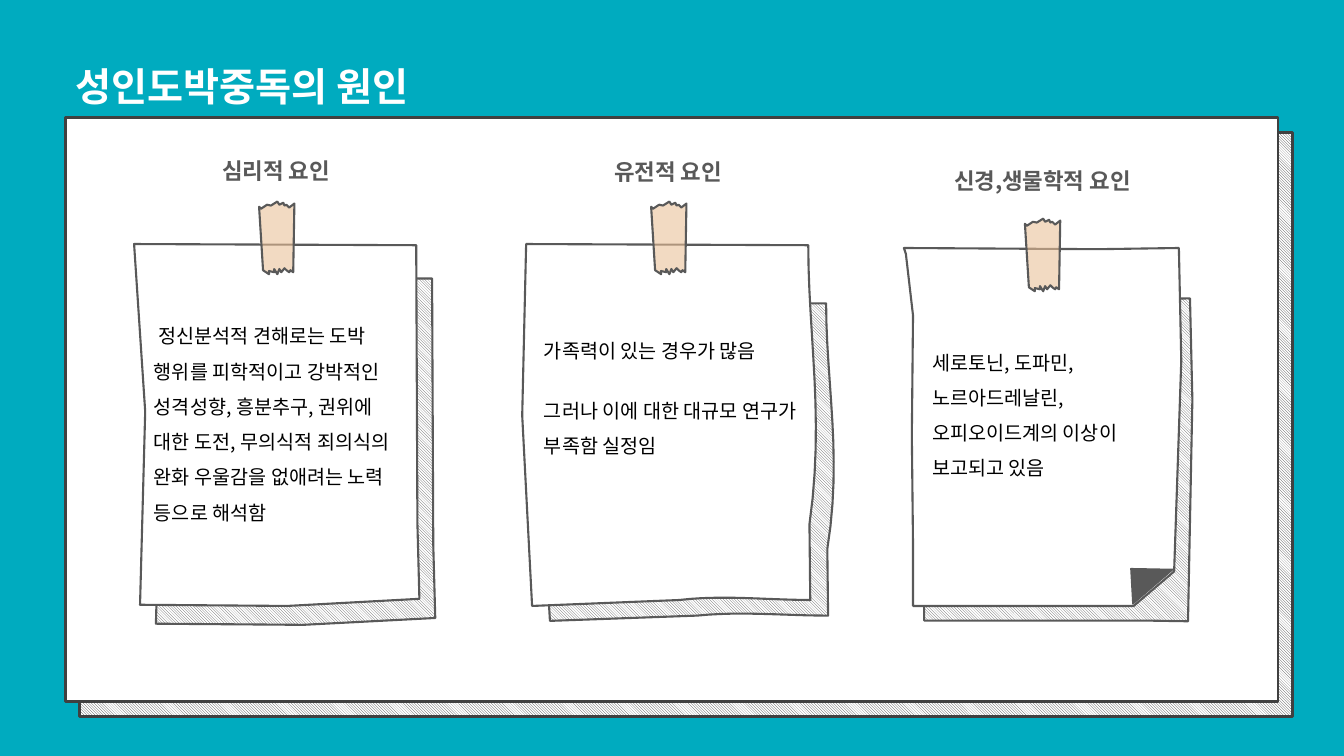
from dataclasses import dataclass

from lxml import etree
from pptx import Presentation
from pptx.dml.color import RGBColor
from pptx.enum.dml import MSO_PATTERN
from pptx.enum.shapes import MSO_SHAPE
from pptx.enum.text import PP_ALIGN
from pptx.oxml.ns import qn
from pptx.util import Cm, Pt

RECTANGLE = MSO_SHAPE.RECTANGLE
HATCH = MSO_PATTERN.DARK_DOWNWARD_DIAGONAL
LEFT, CENTER = PP_ALIGN.LEFT, PP_ALIGN.CENTER


@dataclass(frozen=True)
class Theme:
    font: str = "Noto Sans CJK KR"
    teal: str = "00ABBF"
    white: str = "FFFFFF"
    black: str = "000000"
    frame: str = "404040"
    pencil: str = "595959"
    tape: str = "EAC096"
    tape_opacity: int = 58
    title_size: float = 28
    label_size: float = 16
    body_size: float = 14
    paragraph_gap: float = 17.5


THEME = Theme()

# Outlines in cm from their own top left; six numbers make a Bezier curve.
TAPE = [
    (0.1, 1.73), (0.25, 1.83), (0.25, 1.75), (0.38, 1.78), (0.38, 1.7), (0.46, 1.83),
    (0.51, 1.7), (0.56, 1.78), (0.64, 1.68), (0.69, 1.73), (0.76, 1.78), (0.79, 1.73),
    (0.86, 1.78), (0.89, 0.05), (0.76, 0.15), (0.69, 0.08), (0.64, 0.1), (0.61, 0.03),
    (0.51, 0.08), (0.46, 0), (0.3, 0.1), (0.2, 0.08), (0.05, 0.18), (0, 0.13),
]
TILTED_SHEET = [
    (0, 0), (7.11, 0.03), (7.14, 7.04), (7.19, 8.94), (3.86, 9.12), (0.15, 9.09), (0.28, 4.22),
]
WAVY_SHEET = [
    (0.1, 0), (7.21, 0.03), (7.21, 2.36, 7.62, 4.39, 7.24, 7.06), (7.26, 8.97),
    (6.17, 8.97, 5.08, 8.84, 3.96, 8.97), (0.25, 9.12), (0, 4.32),
]
FOLDED_TOP = [(0, 0), (4.9, 0.03), (6.93, 0), (6.99, 2.84)]
FOLDED_BOTTOM = [
    (5.79, 9.02), (0.23, 9.02), (0.23, 7.49), (0.2, 4.72), (0.23, 1.7), (0.05, 0.15),
]
FOLDED_SHEET = FOLDED_TOP + [(6.81, 8.15)] + FOLDED_BOTTOM
UNFOLDED_SHEET = FOLDED_TOP + [(6.88, 9.04)] + FOLDED_BOTTOM
FOLD = [(5.77, 8.97), (6.78, 8.1), (5.72, 8.08)]


@dataclass(frozen=True)
class Card:
    label: str
    label_box: tuple
    body: tuple
    body_box: tuple
    outline: list
    sheet_at: tuple
    shadow_outline: list
    shadow_at: tuple
    shadow_stretch: float
    tape_at: tuple
    fold: list = ()


CARDS = [
    Card("심리적 요인", (5.18, 3.84, 3.56, 0.94),
         (" 정신분석적 견해로는 도박 행위를 피학적이고 강박적인 성격성향, 흥분추구, 권위에 "
          "대한 도전, 무의식적 죄의식의 완화 우울감을 없애려는 노력 등으로 해석함",),
         (3.63, 7.75, 6.91, 5.64),
         TILTED_SHEET, (3.38, 6.15), TILTED_SHEET, (3.78, 6.99), 0.96, (6.53, 5.08)),
    Card("유전적 요인", (15.06, 3.86, 3.56, 0.94),
         ("가족력이 있는 경우가 많음", "그러나 이에 대한 대규모 연구가 부족함 실정임"),
         (13.46, 8.13, 6.91, 3.58),
         WAVY_SHEET, (13.16, 6.15), WAVY_SHEET, (13.61, 7.62), 0.88, (16.41, 5.08)),
    Card("신경,생물학적 요인", (23.55, 4.09, 5.44, 0.94),
         ("세로토닌, 도파민, 노르아드레날린, 오피오이드계의 이상이 보고되고 있음",),
         (23.24, 8.41, 6.38, 2.95),
         FOLDED_SHEET, (22.78, 6.25), UNFOLDED_SHEET, (23.06, 7.52), 0.9, (25.83, 5.51), FOLD),
]


def rgb(color):
    return RGBColor.from_string(color)


def paint(shape, fill, line, width, hatched=False, opacity=None):
    shape.shadow.inherit = False
    if hatched:
        shape.fill.patterned()
        shape.fill.pattern = HATCH
        shape.fill.fore_color.rgb = rgb(fill)
        shape.fill.back_color.rgb = rgb(THEME.white)
    else:
        shape.fill.solid()
        shape.fill.fore_color.rgb = rgb(fill)
    if opacity is not None:
        color = shape.fill._xPr.find(qn("a:solidFill"))[0]
        etree.SubElement(color, qn("a:alpha")).set("val", str(opacity * 1000))
    shape.line.color.rgb = rgb(line)
    shape.line.width = Pt(width)


def add_panel(slide, left, top, fill, hatched=False):
    shape = slide.shapes.add_shape(RECTANGLE, Cm(left), Cm(top), Cm(30.56), Cm(14.71))
    paint(shape, fill, THEME.frame, 2, hatched)


def flatten(outline, steps=12):
    """Return the outline as plain points, with curves sampled."""
    points = []
    for item in outline:
        if len(item) == 2:
            points.append(item)
            continue
        start, controls = points[-1], (item[:2], item[2:4], item[4:])
        for step in range(1, steps + 1):
            t = step / steps
            weights = ((1 - t) ** 3, 3 * t * (1 - t) ** 2, 3 * t * t * (1 - t), t ** 3)
            points.append(tuple(
                sum(weight * point[axis] for weight, point in zip(weights, (start, *controls)))
                for axis in (0, 1)))
    return points


def add_outline(slide, outline, at, fill, width=1.5, stretch=1, **style):
    """Draw a closed outline at a place, with its height stretched."""
    points = [(Cm(at[0] + x), Cm(at[1] + y * stretch)) for x, y in flatten(outline)]
    builder = slide.shapes.build_freeform(*points[0])
    builder.add_line_segments(points[1:], close=True)
    paint(builder.convert_to_shape(), fill, THEME.pencil, width, **style)


def add_text(slide, paragraphs, box, *, size, color, bold=False, align=LEFT,
             wrap=True, line_spacing=1.0):
    frame = slide.shapes.add_textbox(*(Cm(length) for length in box)).text_frame
    frame.word_wrap = wrap
    for index, text in enumerate(paragraphs):
        paragraph = frame.add_paragraph() if index else frame.paragraphs[0]
        paragraph.alignment = align
        paragraph.line_spacing = line_spacing
        if index:
            paragraph.space_before = Pt(THEME.paragraph_gap)
        run = paragraph.add_run()
        run.text = text
        run.font.name = THEME.font
        run.font.size = Pt(size)
        run.font.bold = bold
        run.font.color.rgb = rgb(color)
        east_asian = etree.SubElement(run.font._element, qn("a:ea"))
        east_asian.set("typeface", THEME.font)


def add_card(slide, card):
    add_outline(slide, card.shadow_outline, card.shadow_at, THEME.pencil,
                stretch=card.shadow_stretch, hatched=True)
    add_outline(slide, card.outline, card.sheet_at, THEME.white)
    if card.fold:
        add_outline(slide, card.fold, card.sheet_at, THEME.pencil, width=1)
    add_outline(slide, TAPE, card.tape_at, THEME.tape, opacity=THEME.tape_opacity)
    add_text(slide, [card.label], card.label_box, size=THEME.label_size,
             color=THEME.pencil, bold=True, align=CENTER, wrap=False)
    add_text(slide, card.body, card.body_box, size=THEME.body_size,
             color=THEME.black, line_spacing=1.5)


def main():
    presentation = Presentation()
    presentation.slide_width, presentation.slide_height = Cm(33.87), Cm(19.05)
    slide = presentation.slides.add_slide(presentation.slide_layouts[6])
    slide.background.fill.solid()
    slide.background.fill.fore_color.rgb = rgb(THEME.teal)

    add_panel(slide, 2.01, 3.35, THEME.frame, hatched=True)
    add_panel(slide, 1.65, 2.97, THEME.white)
    for card in CARDS:
        add_card(slide, card)
    add_text(slide, ["성인도박중독의 원인"], (1.65, 0.86, 15.32, 1.83), size=THEME.title_size,
             color=THEME.white, bold=True, line_spacing=1.5)
    presentation.save("out.pptx")


if __name__ == "__main__":
    main()
